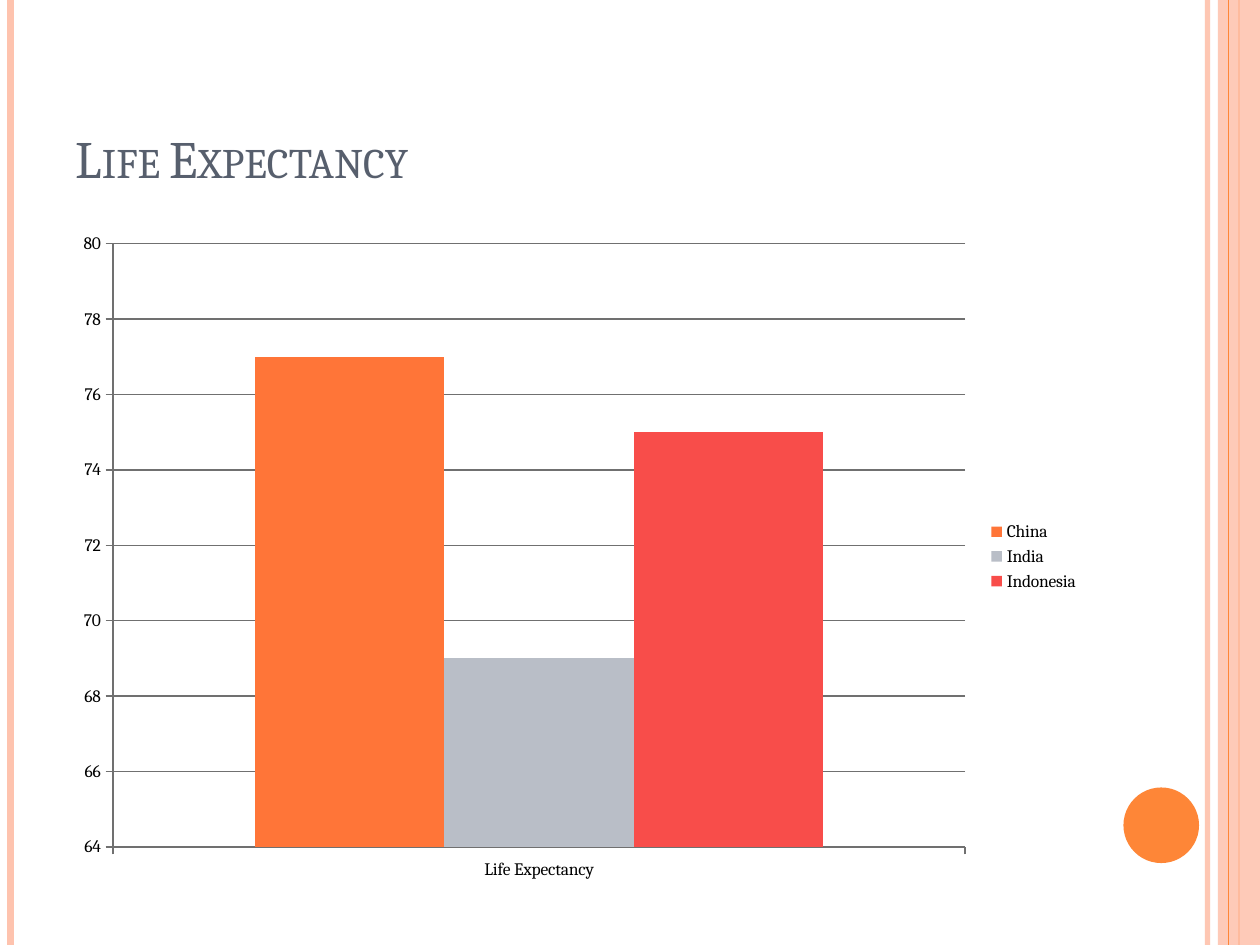
"""Build the Life Expectancy slide: a column chart between decorative side stripes."""
import pptx
import pptx.chart.data
import pptx.dml.color
import pptx.enum.chart
import pptx.enum.shapes
import pptx.enum.text
import pptx.oxml
import pptx.oxml.ns
import pptx.util
from pptx.util import Pt

RGBColor = pptx.dml.color.RGBColor
ORANGE = RGBColor(0xFE, 0x86, 0x37)
PEACH = RGBColor(0xFE, 0xC3, 0xAE)
SLATE = RGBColor(0x57, 0x5F, 0x6D)
BLACK = RGBColor(0, 0, 0)
GRID_GRAY = RGBColor(0x70, 0x70, 0x70)
COUNTRIES = [
    ("China", 77, RGBColor(0xFF, 0x75, 0x38)),
    ("India", 69, RGBColor(0xB9, 0xBE, 0xC7)),
    ("Indonesia", 75, RGBColor(0xF8, 0x4D, 0x4A)),
]
FONT = "Cambria"
HEIGHT = 540


def write(frame, text, size, color, font=FONT, small_caps=False):
    paragraph = frame.paragraphs[0]
    paragraph.alignment = pptx.enum.text.PP_ALIGN.LEFT
    run = paragraph.add_run()
    run.text = text
    run.font.size = Pt(size)
    run.font.name = font
    run.font.color.rgb = color
    if small_caps:
        run.font._element.set("cap", "small")


def set_alpha(element, percent):
    color = element.find(".//" + pptx.oxml.ns.qn("a:srgbClr"))
    alpha = pptx.oxml.parse_xml(f'<a:alpha {pptx.oxml.ns.nsdecls("a")} val="{percent * 1000}"/>')
    color.append(alpha)


deck = pptx.Presentation()
deck.slide_width, deck.slide_height = Pt(720), Pt(HEIGHT)
slide = deck.slides.add_slide(deck.slide_layouts[5])
shapes = slide.shapes

band = shapes.add_shape(pptx.enum.shapes.MSO_SHAPE.RECTANGLE, Pt(696), 0, Pt(24), Pt(HEIGHT))
dot = shapes.add_shape(pptx.enum.shapes.MSO_SHAPE.OVAL, Pt(642), Pt(450), Pt(43.2), Pt(43.2))
for ornament, color in ((band, PEACH), (dot, ORANGE)):
    ornament.shadow.inherit = False
    ornament.fill.solid()
    ornament.fill.fore_color.rgb = color
    ornament.line.fill.background()
set_alpha(band._element.spPr, 87)

for x, color, width, opacity, behind_band in (
    (690, PEACH, 3, 93, True),
    (6, PEACH, 4.5, 100, True),
    (708, ORANGE, 1.5, 100, True),
    (702, ORANGE, 0.75, 100, False),
):
    stripe = shapes.add_connector(
        pptx.enum.shapes.MSO_CONNECTOR.STRAIGHT, Pt(x), 0, Pt(x), Pt(HEIGHT))
    stripe.line.color.rgb = color
    stripe.line.width = Pt(width)
    properties = stripe._element.spPr
    properties.append(pptx.oxml.parse_xml(f'<a:effectLst {pptx.oxml.ns.nsdecls("a")}/>'))
    if opacity < 100:
        set_alpha(properties, opacity)
    if behind_band:
        band._element.addprevious(stripe._element)

heading = shapes.title
heading.left, heading.top, heading.width, heading.height = Pt(36), Pt(21.6), Pt(588), Pt(90)
heading.text_frame.vertical_anchor = pptx.enum.text.MSO_ANCHOR.BOTTOM
write(heading.text_frame, "Life Expectancy", size=30, color=SLATE, small_caps=True)

data = pptx.chart.data.CategoryChartData()
data.categories = ["Life Expectancy"]
for country, years, color in COUNTRIES:
    data.add_series(country, [years])
chart = shapes.add_chart(
    pptx.enum.chart.XL_CHART_TYPE.COLUMN_CLUSTERED,
    Pt(36), Pt(126), Pt(588), Pt(384), data).chart
chart.has_title = False
chart.font.name = FONT
chart.font.size = Pt(10)
chart.font.color.rgb = BLACK
chart.has_legend = True
chart.legend.position = pptx.enum.chart.XL_LEGEND_POSITION.RIGHT
chart.legend.include_in_layout = False

columns = chart.plots[0]
columns.gap_width = 150
columns.overlap = 0
columns.vary_by_categories = False
for series, (country, years, color) in zip(columns.series, COUNTRIES):
    series.format.fill.solid()
    series.format.fill.fore_color.rgb = color

for axis in (chart.category_axis, chart.value_axis):
    axis.major_tick_mark = pptx.enum.chart.XL_TICK_MARK.OUTSIDE
    axis.format.line.color.rgb = GRID_GRAY
    axis.format.line.width = Pt(0.75)
years_axis = chart.value_axis
years_axis.minimum_scale, years_axis.maximum_scale, years_axis.major_unit = 64, 80, 2
years_axis.has_major_gridlines = True
years_axis.major_gridlines.format.line.color.rgb = GRID_GRAY
years_axis.major_gridlines.format.line.width = Pt(0.75)

deck.save("out.pptx")
